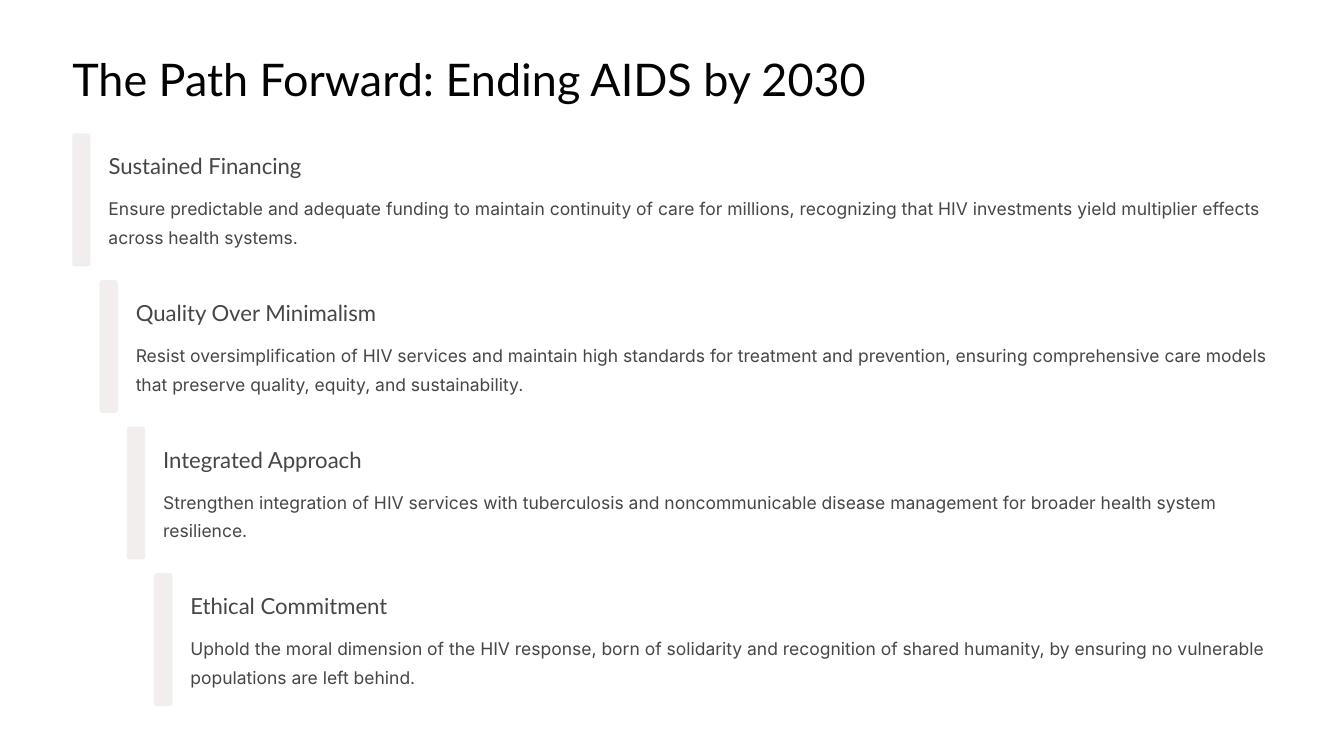
"""Builds a slide with four staggered steps on the path to ending AIDS by 2030."""

from dataclasses import dataclass

from pptx import Presentation
from pptx.dml.color import RGBColor
from pptx.enum.shapes import MSO_SHAPE
from pptx.enum.text import MSO_ANCHOR, MSO_AUTO_SIZE, PP_ALIGN
from pptx.shapes.autoshape import Shape
from pptx.slide import Slide
from pptx.util import Pt


@dataclass(frozen=True)
class TextStyle:
    font: str
    size: float
    leading: float
    color: RGBColor
    wrap: bool = False


@dataclass(frozen=True)
class Theme:
    background: RGBColor = RGBColor(0xFF, 0xFF, 0xFF)
    bar: RGBColor = RGBColor(0xF2, 0xEE, 0xEE)
    title: TextStyle = TextStyle("Lato", 38.5, 48, RGBColor(0x03, 0x03, 0x03))
    heading: TextStyle = TextStyle("Lato", 19, 24, RGBColor(0x46, 0x46, 0x46))
    body: TextStyle = TextStyle("Inter", 15, 24.5, RGBColor(0x46, 0x46, 0x46), True)


@dataclass(frozen=True)
class Box:
    left: float
    top: float
    width: float
    height: float


@dataclass(frozen=True)
class Step:
    heading: str
    body: str


THEME = Theme()
LEFT, TOP, RIGHT = 62, 114.4, 1090
INDENT, PITCH = 23.4, 125.65
BAR_WIDTH, BAR_HEIGHT, TEXT_OFFSET = 15.6, 113.8, 31

STEPS = (
    Step("Sustained Financing",
         "Ensure predictable and adequate funding to maintain continuity of care for millions, "
         "recognizing that HIV investments yield multiplier effects across health systems."),
    Step("Quality Over Minimalism",
         "Resist oversimplification of HIV services and maintain high standards for treatment and "
         "prevention, ensuring comprehensive care models that preserve quality, equity, and "
         "sustainability."),
    Step("Integrated Approach",
         "Strengthen integration of HIV services with tuberculosis and noncommunicable disease "
         "management for broader health system resilience."),
    Step("Ethical Commitment",
         "Uphold the moral dimension of the HIV response, born of solidarity and recognition of "
         "shared humanity, by ensuring no vulnerable populations are left behind."),
)


def write(sp: Shape, text: str, style: TextStyle) -> None:
    """Fill a shape with one paragraph in the given style."""
    tf = sp.text_frame
    tf.text = text
    tf.auto_size = MSO_AUTO_SIZE.NONE
    tf.word_wrap = style.wrap
    tf.vertical_anchor = MSO_ANCHOR.TOP
    tf.margin_left = tf.margin_right = tf.margin_top = tf.margin_bottom = Pt(0)
    p = tf.paragraphs[0]
    p.alignment = PP_ALIGN.LEFT
    p.line_spacing = Pt(style.leading)
    p.space_before = Pt(0)
    font = p.runs[0].font
    font.name, font.size = style.font, Pt(style.size)
    font.color.rgb = style.color


def add_title(slide: Slide, text: str, box: Box) -> None:
    """Place and format the title placeholder."""
    sp = slide.shapes.title
    sp.left, sp.top = Pt(box.left), Pt(box.top)
    sp.width, sp.height = Pt(box.width), Pt(box.height)
    write(sp, text, THEME.title)


def add_text(slide: Slide, text: str, box: Box, style: TextStyle) -> None:
    """Add a text box."""
    sp = slide.shapes.add_textbox(Pt(box.left), Pt(box.top), Pt(box.width), Pt(box.height))
    write(sp, text, style)


def add_bar(slide: Slide, box: Box) -> None:
    """Add a rounded marker bar."""
    sp = slide.shapes.add_shape(MSO_SHAPE.ROUNDED_RECTANGLE, Pt(box.left), Pt(box.top),
                                Pt(box.width), Pt(box.height))
    sp.adjustments[0] = 0.15
    sp.shadow.inherit = False
    sp.fill.solid()
    sp.fill.fore_color.rgb = THEME.bar
    sp.line.fill.background()


def add_step(slide: Slide, step: Step, index: int) -> None:
    """Add one step, indented and lowered by its index."""
    left, top = LEFT + index * INDENT, TOP + index * PITCH
    text_left = left + TEXT_OFFSET
    add_bar(slide, Box(left, top, BAR_WIDTH, BAR_HEIGHT))
    add_text(slide, step.heading, Box(text_left, top + 15.4, 228, 24.5), THEME.heading)
    add_text(slide, step.body, Box(text_left, top + 49.2, RIGHT - text_left, 49.7), THEME.body)


def main() -> None:
    """Build and save the presentation."""
    prs = Presentation()
    prs.slide_width, prs.slide_height = Pt(1152), Pt(648)
    slide = prs.slides.add_slide(prs.slide_layouts[5])
    slide.background.fill.solid()
    slide.background.fill.fore_color.rgb = THEME.background
    add_title(slide, "The Path Forward: Ending AIDS by 2030", Box(LEFT, 42.5, 731, 48))
    for index, step in enumerate(STEPS):
        add_step(slide, step, index)
    prs.save("out.pptx")


if __name__ == "__main__":
    main()
